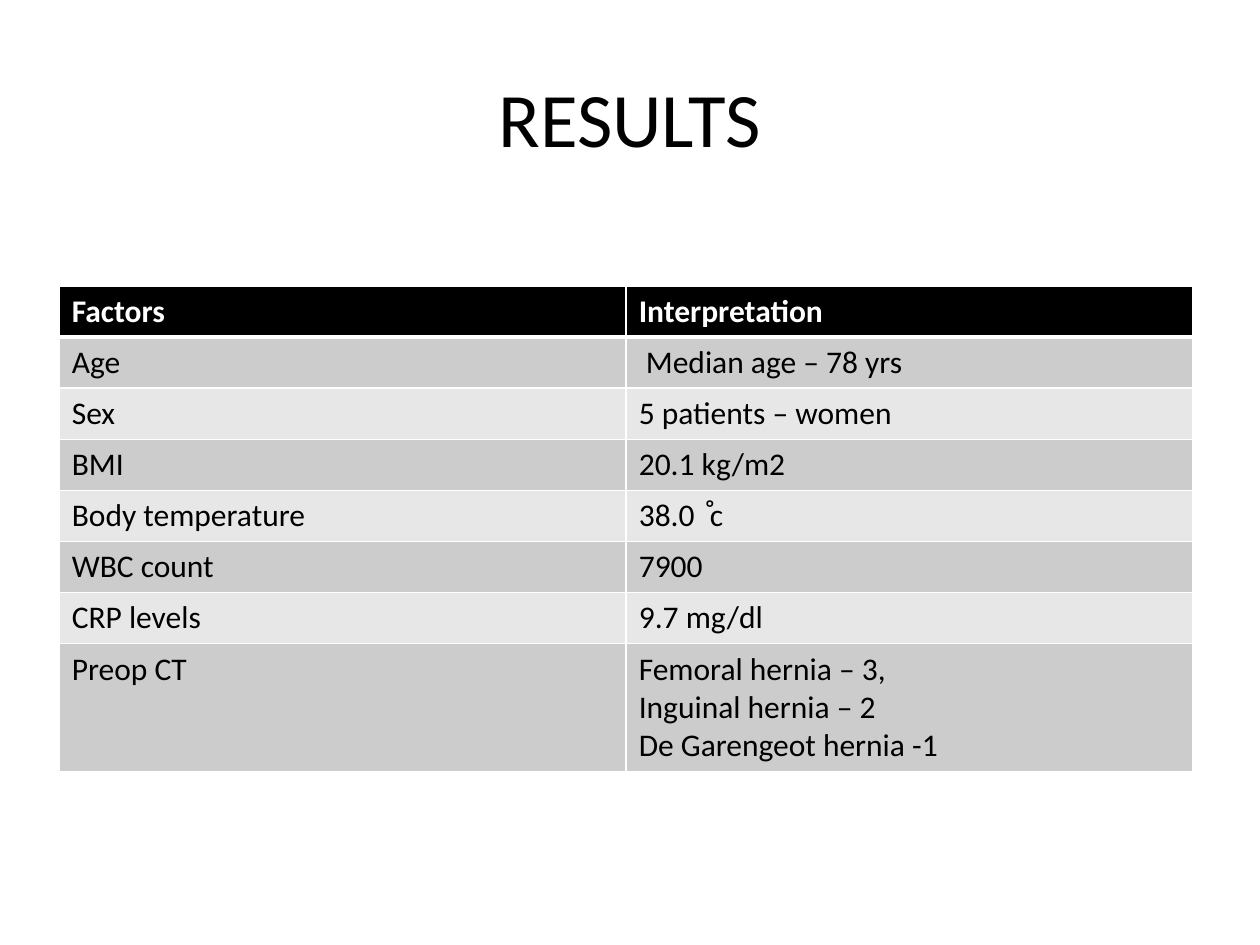
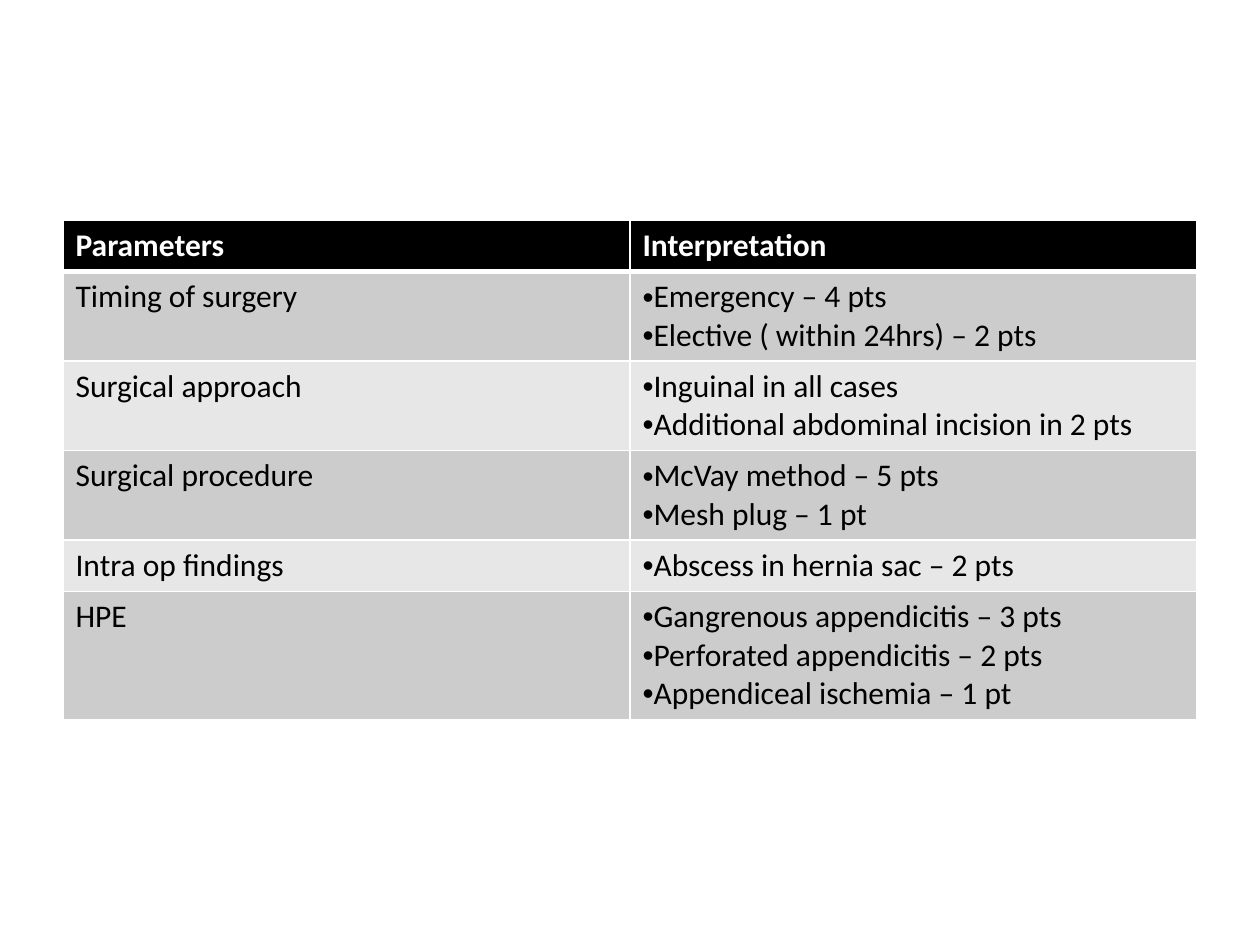
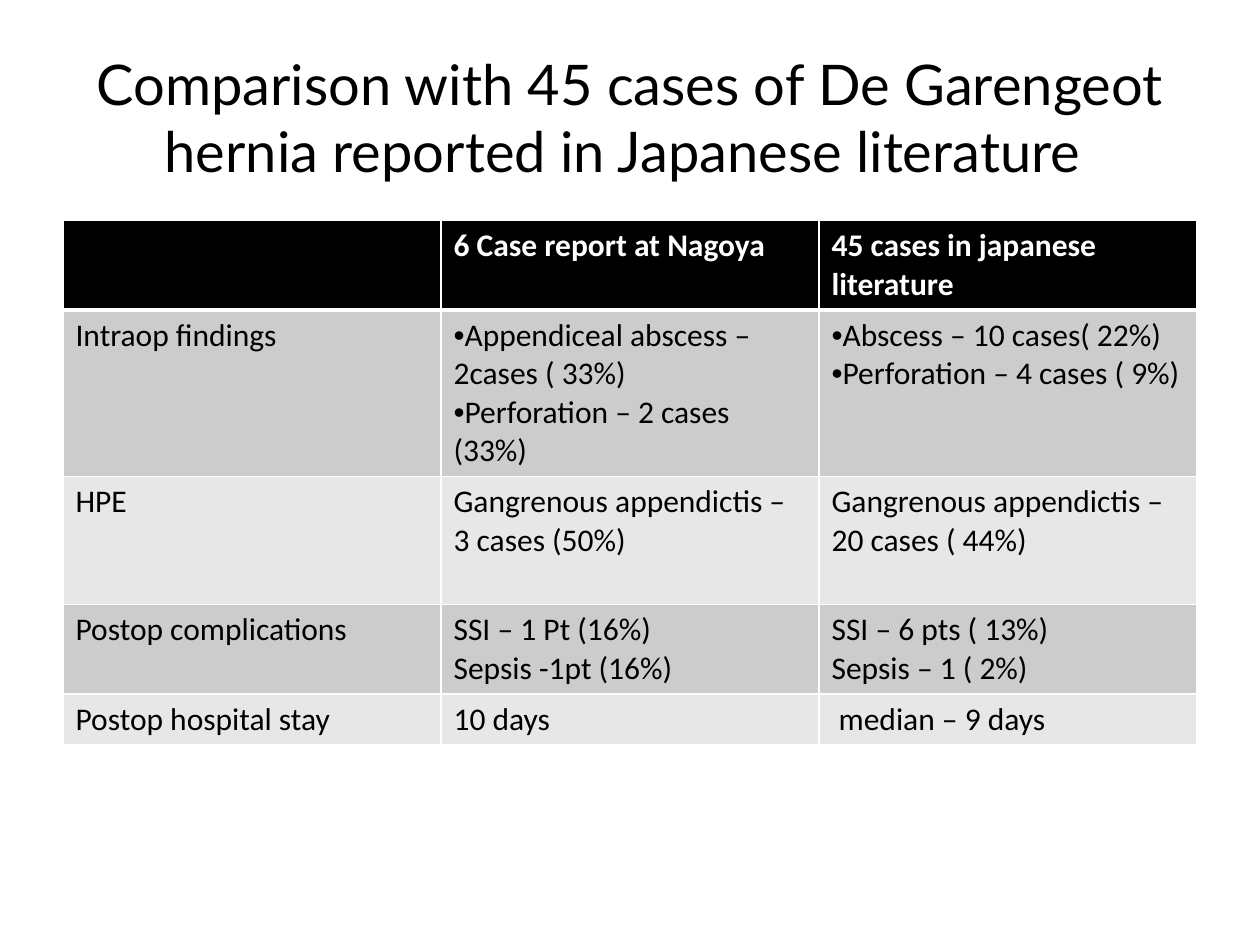
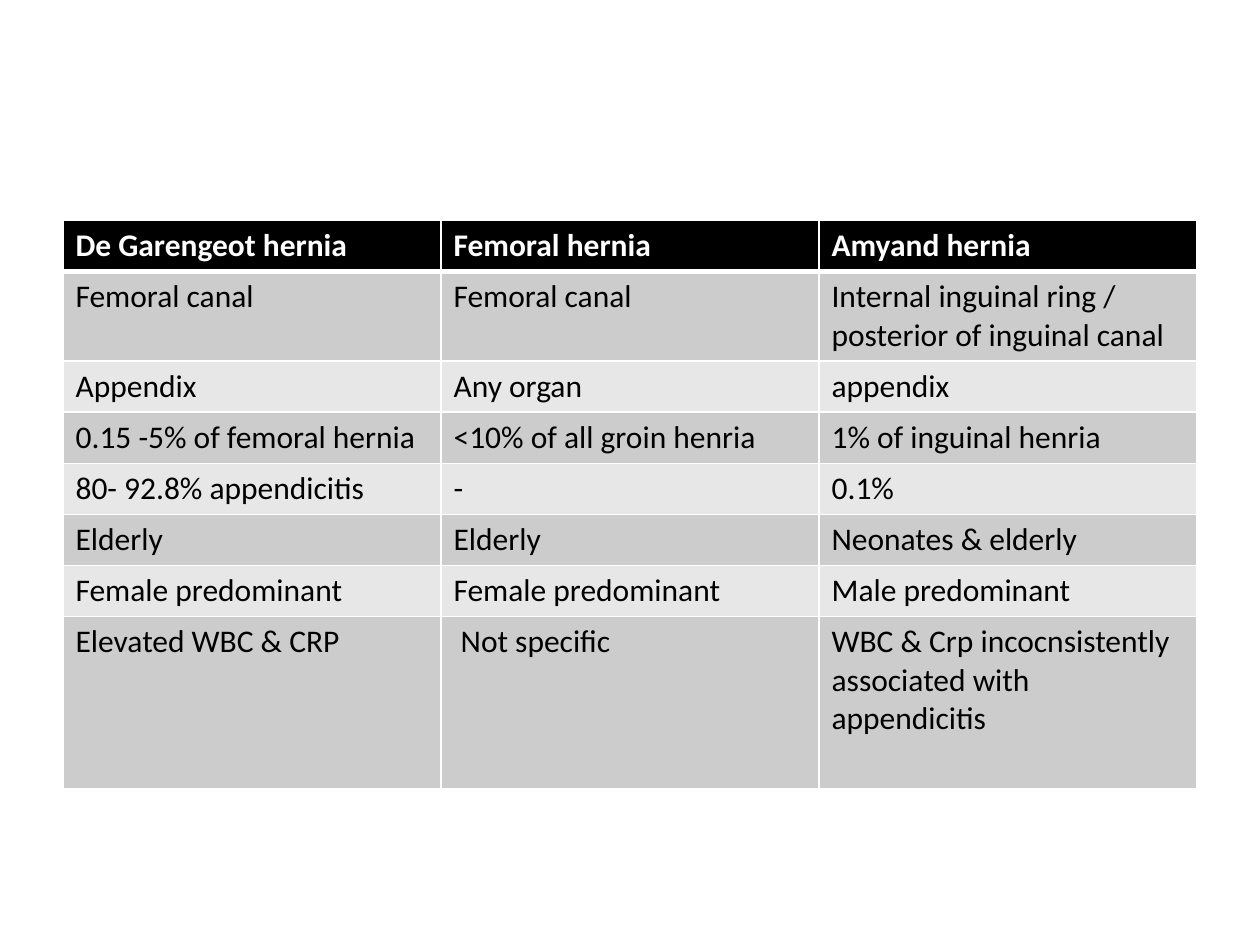
from dataclasses import dataclass

from lxml.etree import SubElement
from pptx import Presentation
from pptx.dml.color import RGBColor
from pptx.enum.text import MSO_ANCHOR, MSO_AUTO_SIZE, PP_ALIGN
from pptx.oxml.ns import qn
from pptx.util import Inches, Pt


@dataclass(frozen=True)
class Theme:
    black: str = "000000"
    white: str = "FFFFFF"
    bands: tuple = ("CCCCCC", "E7E7E7")
    font: str = "Calibri"
    title_size: int = 44
    cell_size: int = 18
    rule: int = 1
    header_rule: int = 3
    line_height: float = 0.305
    cell_padding: float = 0.1


BULLET = "•"
TITLE_ONLY, BLANK = 5, 6


class Deck:
    """Holds the style and the current slide."""

    def __init__(self, theme):
        self.theme = theme
        self.presentation = Presentation()
        self.presentation.slide_width = Inches(10)
        self.presentation.slide_height = Inches(7.5)
        self.slide = None

    def add_slide(self, layout=BLANK):
        layouts = self.presentation.slide_layouts
        self.slide = self.presentation.slides.add_slide(layouts[layout])

    def add_titled_slide(self, text, font=None, size=None):
        self.add_slide(TITLE_ONLY)
        title = self.slide.shapes.title
        title.left, title.top = Inches(0.5), Inches(0.3)
        title.width, title.height = Inches(9), Inches(1.25)
        frame = title.text_frame
        frame.text = text
        frame.word_wrap = True
        frame.auto_size = MSO_AUTO_SIZE.NONE
        frame.vertical_anchor = MSO_ANCHOR.MIDDLE
        frame.paragraphs[0].alignment = PP_ALIGN.CENTER
        self.format_runs(frame.paragraphs[0], self.theme.black,
                         size or self.theme.title_size, font)

    def add_table(self, rows, line_counts, left=0.5, top=1.75, last_height=None):
        """Lay out equal columns, with each row as tall as its lines of text."""
        theme = self.theme
        heights = [theme.cell_padding + theme.line_height * n for n in line_counts]
        if last_height:
            heights[-1] = last_height
        table = self.slide.shapes.add_table(
            len(rows), len(rows[0]), Inches(left), Inches(top),
            Inches(9), Inches(sum(heights))).table
        for column in table.columns:
            column.width = Inches(9 / len(rows[0]))
        for index, (texts, height) in enumerate(zip(rows, heights)):
            table.rows[index].height = Inches(height)
            for cell, text in zip(table.rows[index].cells, texts):
                self.fill_cell(cell, text, index)

    def fill_cell(self, cell, text, row):
        theme = self.theme
        is_header = row == 0
        fill = theme.black if is_header else theme.bands[(row - 1) % 2]
        self.add_borders(cell, row)
        cell.fill.solid()
        cell.fill.fore_color.rgb = RGBColor.from_string(fill)
        cell.text_frame.text = text
        for paragraph in cell.text_frame.paragraphs:
            if paragraph.text.startswith(BULLET):
                paragraph.text = paragraph.text.removeprefix(BULLET)
                self.add_bullet(paragraph)
            self.format_runs(paragraph, theme.white if is_header else theme.black,
                             theme.cell_size, bold=is_header)

    def add_borders(self, cell, row):
        # The edge between header and body is the thick one
        thick_edge = {0: "B", 1: "T"}.get(row)
        properties = cell._tc.get_or_add_tcPr()
        for edge in "LRTB":
            width = self.theme.header_rule if edge == thick_edge else self.theme.rule
            line = SubElement(properties, qn(f"a:ln{edge}"), w=str(Pt(width)))
            line_fill = SubElement(line, qn("a:solidFill"))
            SubElement(line_fill, qn("a:srgbClr"), val=self.theme.white)

    def add_bullet(self, paragraph):
        properties = paragraph._p.get_or_add_pPr()
        properties.set("marL", "0")
        properties.set("indent", "0")
        SubElement(properties, qn("a:buFont"), typeface="Arial")
        SubElement(properties, qn("a:buChar"), char=BULLET)

    def format_runs(self, paragraph, color, size, font=None, bold=False):
        for run in paragraph.runs:
            run.font.name = font or self.theme.font
            run.font.size = Pt(size)
            run.font.bold = bold
            run.font.color.rgb = RGBColor.from_string(color)

    def save(self):
        self.presentation.save("out.pptx")


def main():
    deck = Deck(Theme())

    # Patient factors
    deck.add_titled_slide("RESULTS")
    deck.add_table([
        ("Factors", "Interpretation"),
        ("Age", " Median age – 78 yrs"),
        ("Sex", "5 patients – women"),
        ("BMI", "20.1 kg/m2"),
        ("Body temperature", "38.0  ̊c"),
        ("WBC count", "7900"),
        ("CRP levels", "9.7 mg/dl"),
        ("Preop CT",
         "Femoral hernia – 3,\nInguinal hernia – 2\nDe Garengeot hernia -1"),
    ], line_counts=[1] * 7 + [3], left=0.47, top=2.27)

    # Surgery
    deck.add_slide()
    deck.add_table([
        ("Parameters", "Interpretation"),
        ("Timing of surgery",
         "•Emergency – 4 pts\n•Elective ( within 24hrs) – 2 pts"),
        ("Surgical approach",
         "•Inguinal in all cases\n•Additional abdominal incision in 2 pts"),
        ("Surgical procedure", "•McVay method – 5 pts\n•Mesh plug – 1 pt"),
        ("Intra op findings", "•Abscess in hernia sac – 2 pts"),
        ("HPE", "•Gangrenous appendicitis – 3 pts\n"
                "•Perforated appendicitis – 2 pts\n"
                "•Appendiceal ischemia – 1 pt"),
    ], line_counts=[1, 2, 2, 2, 1, 3])

    # Comparison with the literature
    deck.add_titled_slide(
        "Comparison with 45 cases of De Garengeot hernia reported in "
        "Japanese literature ", font="Lato", size=32)
    deck.add_table([
        ("", "6 Case report at Nagoya", "45 cases in japanese literature"),
        ("Intraop findings",
         "•Appendiceal abscess – 2cases ( 33%)\n•Perforation – 2 cases (33%)",
         "•Abscess – 10 cases( 22%)\n•Perforation – 4 cases ( 9%)"),
        ("HPE", "Gangrenous appendictis – 3 cases (50%)",
         "Gangrenous appendictis – 20 cases ( 44%)"),
        ("Postop complications", "SSI – 1 Pt (16%)\nSepsis -1pt (16%)",
         "SSI – 6 pts ( 13%)\nSepsis – 1 ( 2%)"),
        ("Postop hospital stay", "10 days", " median – 9 days"),
    ], line_counts=[2, 4, 3, 2, 1])

    # Types of hernia
    deck.add_slide()
    deck.add_table([
        ("De Garengeot hernia", "Femoral hernia", "Amyand hernia"),
        ("Femoral canal", "Femoral canal",
         "Internal inguinal ring / posterior of inguinal canal"),
        ("Appendix", "Any organ", "appendix"),
        ("0.15 -5% of femoral hernia", "<10% of all groin henria",
         "1% of inguinal henria"),
        ("80- 92.8% appendicitis", "-", "0.1%"),
        ("Elderly", "Elderly", "Neonates & elderly"),
        ("Female predominant", "Female predominant", "Male predominant"),
        ("Elevated WBC & CRP", " Not specific",
         "WBC & Crp incocnsistently associated with appendicitis"),
    ], line_counts=[1, 2, 1, 1, 1, 1, 1, 3], last_height=1.37)

    deck.save()


if __name__ == "__main__":
    main()
